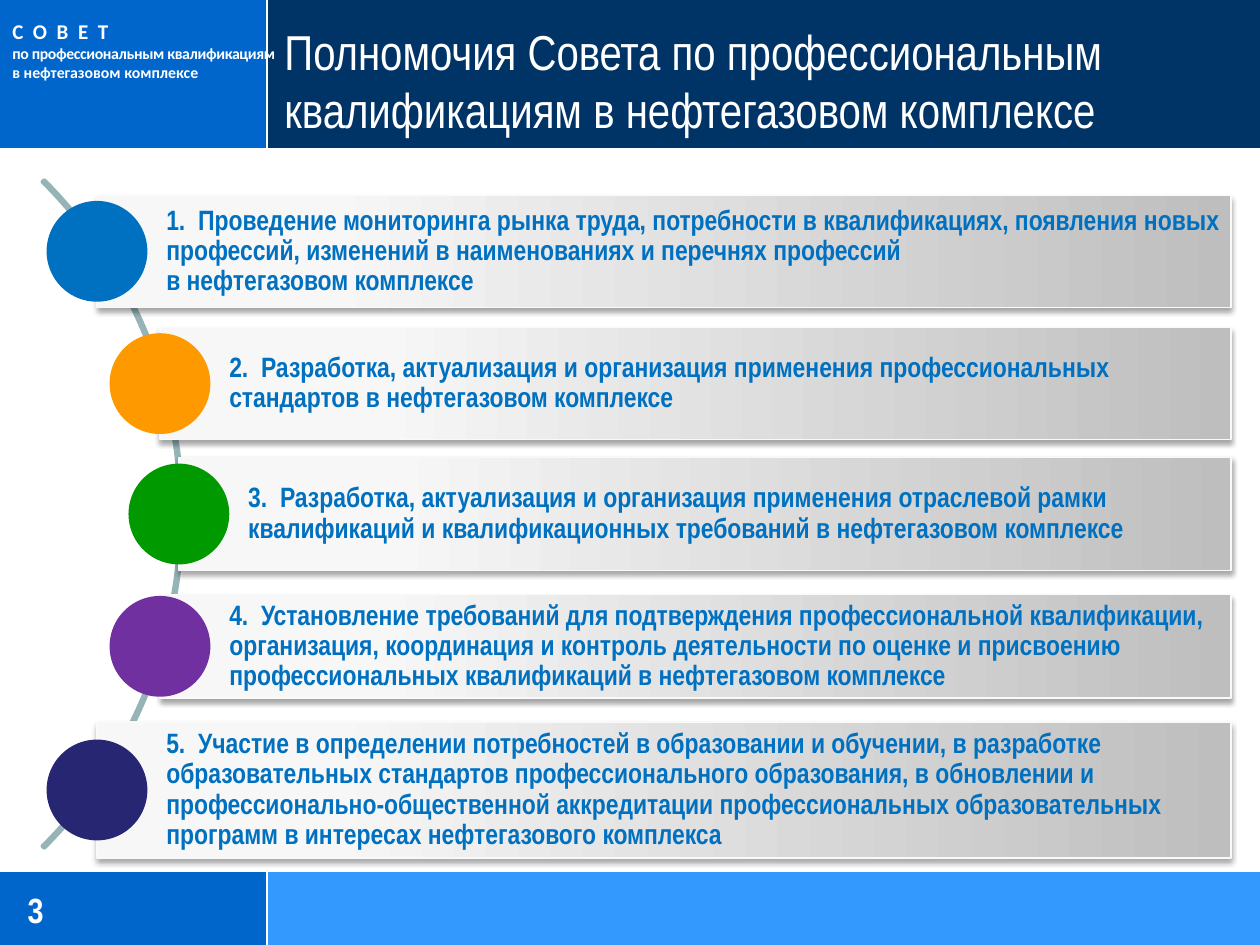
import pptx
import pptx.util
import pptx.dml.color
import pptx.enum.shapes
import pptx.enum.text
import pptx.oxml.ns
from lxml import etree

Inches = pptx.util.Inches
Pt = pptx.util.Pt
RGBColor = pptx.dml.color.RGBColor
MSO_SHAPE = pptx.enum.shapes.MSO_SHAPE
MSO_ANCHOR = pptx.enum.text.MSO_ANCHOR
qn = pptx.oxml.ns.qn

WHITE = RGBColor(0xFF, 0xFF, 0xFF)
BLUE = RGBColor(0x00, 0x66, 0xCC)
LIGHT_BLUE = RGBColor(0x33, 0x99, 0xFF)
NAVY = RGBColor(0x00, 0x33, 0x66)
ARC_COLOR = RGBColor(0x96, 0xB3, 0xB6)
BAR_LINE = RGBColor(0xF9, 0xF9, 0xF9)
ITEM_BLUE = RGBColor(0x00, 0x70, 0xC0)
ORANGE = RGBColor(0xFF, 0x99, 0x00)
GREEN = RGBColor(0x00, 0x99, 0x00)
PURPLE = RGBColor(0x70, 0x30, 0xA0)
INDIGO = RGBColor(0x26, 0x26, 0x73)
BAR_STOPS = [(0, RGBColor(0xBE, 0xBE, 0xBE)), (80, RGBColor(0xF7, 0xF7, 0xF7)),
             (100, RGBColor(0xF8, 0xF8, 0xF8))]

SLIDE_WIDTH, SLIDE_HEIGHT = 10, 7.5
SPLIT = 2.12  # width of the left column in header and footer
HEADER_HEIGHT, FOOTER_TOP = 1.18, 6.91
BAR_RIGHT, CIRCLE_SIZE = 9.77, 0.8

# Bar left, top, height; circle colour; paragraphs
ITEMS = [
    (0.77, 1.55, 0.89, ITEM_BLUE,
     ["1.  Проведение мониторинга рынка труда, потребности в квалификациях, появления новых "
      "профессий, изменений в наименованиях и перечнях профессий",
      "в нефтегазовом комплексе"]),
    (1.27, 2.6, 0.89, ORANGE,
     ["2.  Разработка, актуализация и организация применения профессиональных "
      "стандартов в нефтегазовом комплексе"]),
    (1.42, 3.63, 0.9, GREEN,
     ["3.  Разработка, актуализация и организация применения отраслевой рамки "
      "квалификаций и квалификационных требований в нефтегазовом комплексе"]),
    (1.27, 4.72, 0.82, PURPLE,
     ["4.  Установление требований для подтверждения профессиональной квалификации, "
      "организация, координация и контроль деятельности по оценке и присвоению "
      "профессиональных квалификаций в нефтегазовом комплексе"]),
    (0.77, 5.73, 1.08, INDIGO,
     ["5.  Участие в определении потребностей в образовании и обучении, в разработке "
      "образовательных стандартов профессионального образования, в обновлении и "
      "профессионально-общественной аккредитации профессиональных образовательных "
      "программ в интересах нефтегазового комплекса"]),
]


def add_shape(slide, kind, left, top, width, height, color=None):
    shape = slide.shapes.add_shape(kind, Inches(left), Inches(top), Inches(width), Inches(height))
    shape.shadow.inherit = False
    shape.line.fill.background()
    if color is None:
        shape.fill.background()
    else:
        shape.fill.solid()
        shape.fill.fore_color.rgb = color
    return shape


def add_rule(slide, x1, y1, x2, y2):
    rule = slide.shapes.add_connector(pptx.enum.shapes.MSO_CONNECTOR.STRAIGHT,
                                      Inches(x1), Inches(y1), Inches(x2), Inches(y2))
    rule.line.color.rgb = WHITE
    rule.line.width = Pt(1.25)
    etree.SubElement(rule._element.spPr, qn("a:effectLst"))


def write_text(shape, lines, font, color, anchor, insets=(0.1, 0.05, 0.1, 0.05), line_spacing=None):
    """Each line is (text, size, bold, letter spacing in points)."""
    frame = shape.text_frame
    frame.word_wrap = True
    frame.vertical_anchor = anchor
    frame.margin_left, frame.margin_top, frame.margin_right, frame.margin_bottom = map(Inches, insets)
    for index, (text, size, bold, spacing) in enumerate(lines):
        paragraph = frame.add_paragraph() if index else frame.paragraphs[0]
        paragraph.alignment = pptx.enum.text.PP_ALIGN.LEFT
        paragraph.line_spacing = line_spacing
        run = paragraph.add_run()
        run.text = text
        run.font.name = font
        run.font.size = Pt(size)
        run.font.bold = bold
        run.font.color.rgb = color
        if spacing:
            run._r.get_or_add_rPr().set("spc", str(round(spacing * 100)))


def add_text(slide, left, top, width, height, *text_settings):
    box = slide.shapes.add_textbox(Inches(left), Inches(top), Inches(width), Inches(height))
    write_text(box, *text_settings)


def add_band(slide, top, height, left_color, right_color):
    """Two-colour band across the slide with a white divider."""
    add_shape(slide, MSO_SHAPE.RECTANGLE, 0, top, SPLIT, height, left_color)
    add_shape(slide, MSO_SHAPE.RECTANGLE, SPLIT, top, SLIDE_WIDTH - SPLIT, height, right_color)
    add_rule(slide, SPLIT, top, SPLIT, top + height)


def add_header(slide, top, height):
    add_band(slide, top, height, BLUE, NAVY)
    add_rule(slide, 0, top + height, SLIDE_WIDTH, top + height)
    add_text(slide, 0, top + 0.1, 2.37, 0.61,
             [("С О В Е Т", 12, True, 1.4),
              ("по профессиональным квалификациям", 9, True, -0.2),
              ("в нефтегазовом комплексе", 9, True, 0)],
             "Calibri", WHITE, MSO_ANCHOR.TOP)
    add_text(slide, 2.16, top + 0.16, 7.84, 0.99,
             [("Полномочия Совета по профессиональным квалификациям в нефтегазовом комплексе",
               28, False, 0)],
             "Arial Narrow", WHITE, MSO_ANCHOR.BOTTOM)


def add_footer(slide, top, height):
    add_band(slide, top, height, BLUE, LIGHT_BLUE)
    add_rule(slide, 0, top, SLIDE_WIDTH, top)
    add_text(slide, 0.22, top + 0.05, 1.63, 0.52, [("3", 20, True, 0)],
             "Arial Narrow", WHITE, MSO_ANCHOR.MIDDLE, (0, 0, 0, 0))


def style_bar(bar):
    """Grey gradient, thin outline and a soft shadow below."""
    bar.fill.gradient()
    bar.fill.gradient_angle = 180
    properties = bar._element.spPr
    stops = properties.find(".//" + qn("a:gsLst"))
    for stop in list(stops):
        stops.remove(stop)
    for position, color in BAR_STOPS:
        stop = etree.SubElement(stops, qn("a:gs"), pos=str(position * 1000))
        etree.SubElement(stop, qn("a:srgbClr"), val=str(color))
    bar.line.color.rgb = BAR_LINE
    bar.line.width = Pt(0.75)
    shadow = etree.SubElement(properties.find(qn("a:effectLst")), qn("a:outerShdw"),
                              blurRad=str(Pt(3.1)), dist=str(Pt(1.8)), dir="5400000",
                              rotWithShape="0")
    shadow_color = etree.SubElement(shadow, qn("a:srgbClr"), val="000000")
    etree.SubElement(shadow_color, qn("a:alpha"), val="35000")


def add_item(slide, left, top, width, height, color, texts):
    bar = add_shape(slide, MSO_SHAPE.RECTANGLE, left, top, width, height)
    style_bar(bar)
    write_text(bar, [(text, 16, True, 0) for text in texts], "Arial Narrow", ITEM_BLUE,
               MSO_ANCHOR.MIDDLE, (0.55, 0.04, 0.04, 0.04), 0.9)
    # Circle centred on the left edge of the bar
    add_shape(slide, MSO_SHAPE.OVAL, left - CIRCLE_SIZE / 2, top + (height - CIRCLE_SIZE) / 2,
              CIRCLE_SIZE, CIRCLE_SIZE, color)


def add_list(slide, arc_left, arc_top, arc_size):
    arc = add_shape(slide, MSO_SHAPE.BLOCK_ARC, arc_left, arc_top, arc_size, arc_size)
    for index, value in enumerate((189, 27, 0.003)):
        arc.adjustments[index] = value
    arc.line.color.rgb = ARC_COLOR
    arc.line.width = Pt(2)
    for left, top, height, color, texts in ITEMS:
        add_item(slide, left, top, BAR_RIGHT - left, height, color, texts)


def main():
    presentation = pptx.Presentation()
    presentation.slide_width = Inches(SLIDE_WIDTH)
    presentation.slide_height = Inches(SLIDE_HEIGHT)
    slide = presentation.slides.add_slide(presentation.slide_layouts[6])
    add_footer(slide, FOOTER_TOP, SLIDE_HEIGHT - FOOTER_TOP)
    add_header(slide, 0, HEADER_HEIGHT)
    add_list(slide, -6.05, 0.33, 7.5)
    presentation.save("out.pptx")


if __name__ == "__main__":
    main()
